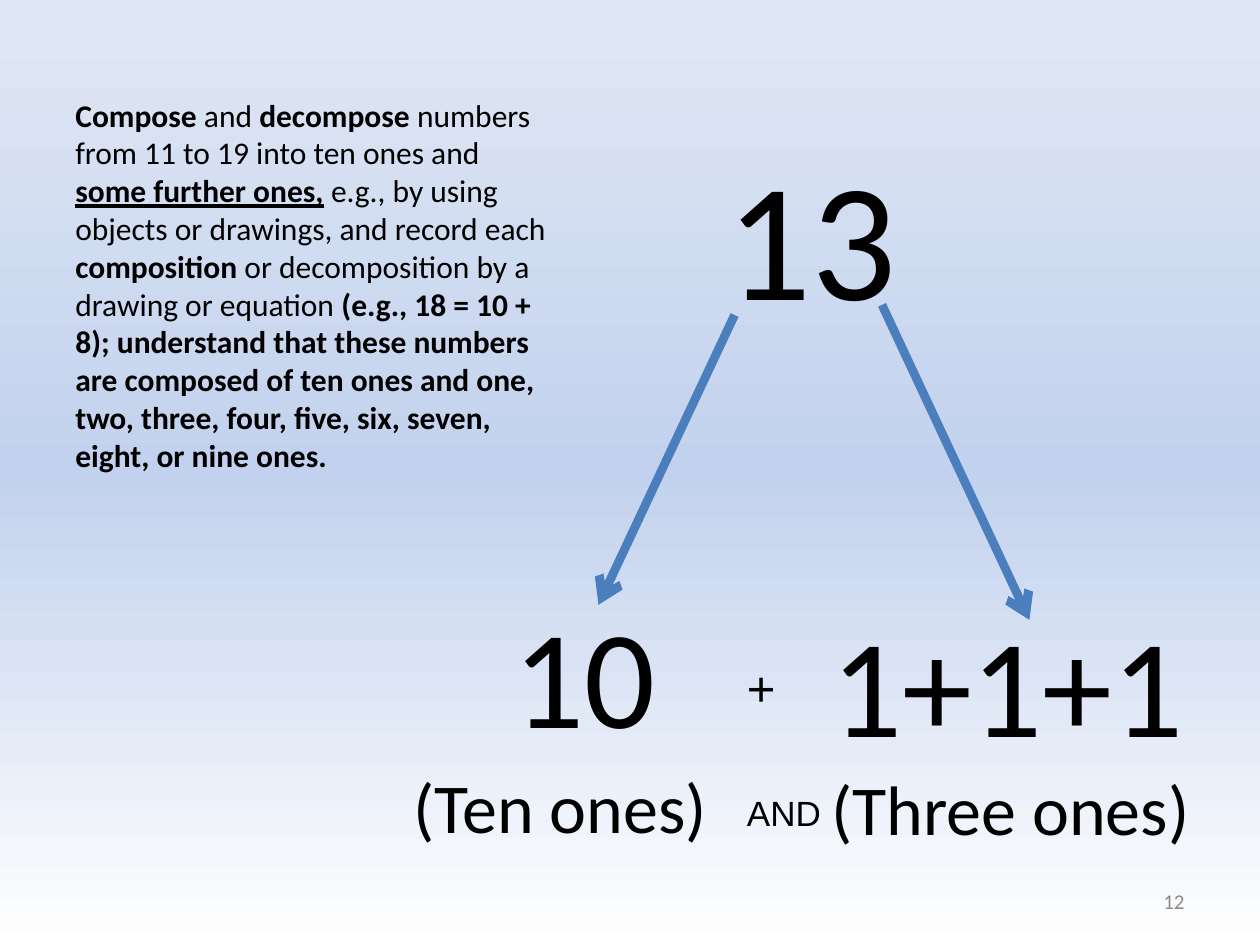
from copy import deepcopy
from dataclasses import dataclass

from lxml.etree import SubElement
from pptx import Presentation
from pptx.dml.color import RGBColor as Rgb
from pptx.enum.shapes import MSO_CONNECTOR as Conn
from pptx.enum.text import MSO_ANCHOR as Anchor, PP_ALIGN as Align
from pptx.oxml.ns import qn
from pptx.util import Inches, Pt


@dataclass(frozen=True)
class Theme:
    font: str = "Calibri"
    sign: str = "Arial"
    ink: str = "000000"
    gray: str = "8C8C8C"
    blue: str = "4B7EBC"
    back: tuple = ((0, "FFFFFF"), (0.5, "C2D1ED"), (1, "E1E8F5"))
    whole: int = 96
    addend: int = 80
    label: int = 40
    plus: int = 28
    word: int = 20
    body: int = 18
    page: int = 12


THEME = Theme()

STANDARD = (
    ("Compose ", "b"),
    ("and ", ""),
    ("decompose ", "b"),
    ("numbers from 11 to 19 into ten ones and ", ""),
    ("some further ones,", "bu"),
    (" e.g., by using objects or drawings, and record each ", ""),
    ("composition ", "b"),
    ("or decomposition by a drawing or equation ", ""),
    ("(e.g., 18 = 10 + 8); understand that these numbers are composed of "
     "ten ones and one, two, three, four, five, six, seven, eight, "
     "or nine ones.", "b"),
)


def paint_back(slide):
    fill = slide.background.fill
    fill.gradient()
    fill.gradient_angle = 90
    stops = slide.element.find(".//" + qn("a:gsLst"))
    stops.insert(1, deepcopy(stops[0]))
    for stop, (place, color) in zip(fill.gradient_stops, THEME.back):
        stop.position = place
        stop.color.rgb = Rgb.from_string(color)


def style(para, size, font=THEME.font, color=THEME.ink):
    para.font.size = Pt(size)
    para.font.name = font
    para.font.color.rgb = Rgb.from_string(color)


def add_box(slide, left, top, width, height):
    box = slide.shapes.add_textbox(*map(Inches, (left, top, width, height)))
    box.text_frame.word_wrap = True
    return box.text_frame


def add_line(slide, place, text, size, **look):
    """Add a text box that holds one paragraph."""
    frame = add_box(slide, *place)
    para = frame.paragraphs[0]
    para.text = text
    style(para, size, **look)
    return frame


def add_addend(slide, place, value, label):
    """Add a number with its name below it."""
    frame = add_line(slide, place, value, THEME.addend)
    name = frame.add_paragraph()
    name.text = label
    style(name, THEME.label)
    return frame.paragraphs


def add_rich(slide, place, runs):
    """Add one paragraph of runs marked b (bold) or u (underlined)."""
    para = add_box(slide, *place).paragraphs[0]
    style(para, THEME.body)
    for text, marks in runs:
        run = para.add_run()
        run.text = text
        run.font.bold = "b" in marks
        run.font.underline = "u" in marks


def add_arrow(slide, start, end):
    arrow = slide.shapes.add_connector(
        Conn.STRAIGHT, *map(Inches, start + end))
    arrow.line.color.rgb = Rgb.from_string(THEME.blue)
    arrow.line.width = Pt(5)
    props = arrow.element.spPr
    SubElement(props.find(qn("a:ln")), qn("a:tailEnd"), type="arrow")
    SubElement(props, qn("a:effectLst"))


def main():
    deck = Presentation()
    deck.slide_width, deck.slide_height = Inches(10), Inches(7.5)
    slide = deck.slides.add_slide(deck.slide_layouts[6])
    paint_back(slide)

    page = add_line(slide, (7.17, 6.95, 2.33, 0.4), "12", THEME.page,
                    color=THEME.gray)
    page.vertical_anchor = Anchor.MIDDLE
    page.paragraphs[0].alignment = Align.RIGHT

    add_line(slide, (5.67, 1, 3.67, 1.72), "13", THEME.whole)
    add_arrow(slide, (5.83, 2.5), (4.75, 4.8))
    add_arrow(slide, (7, 2.42), (8.17, 4.92))

    ten, name = add_addend(slide, (3.08, 4.62, 2.73, 2.17),
                           "10", "(Ten ones)")
    ten._p.get_or_add_pPr().set("marL", str(Inches(0.9)))
    name.alignment = Align.CENTER
    name.space_before = Pt(4)
    add_addend(slide, (6.5, 4.69, 3.25, 2.13), "1+1+1", "(Three ones)")

    add_line(slide, (5.83, 5.17, 0.58, 0.57), "+", THEME.plus,
             font=THEME.sign)
    add_rich(slide, (0.5, 0.71, 4, 4.04), STANDARD)
    add_line(slide, (5.83, 6.23, 0.83, 0.44), "AND", THEME.word,
             font=THEME.sign)

    deck.save("out.pptx")


if __name__ == "__main__":
    main()
